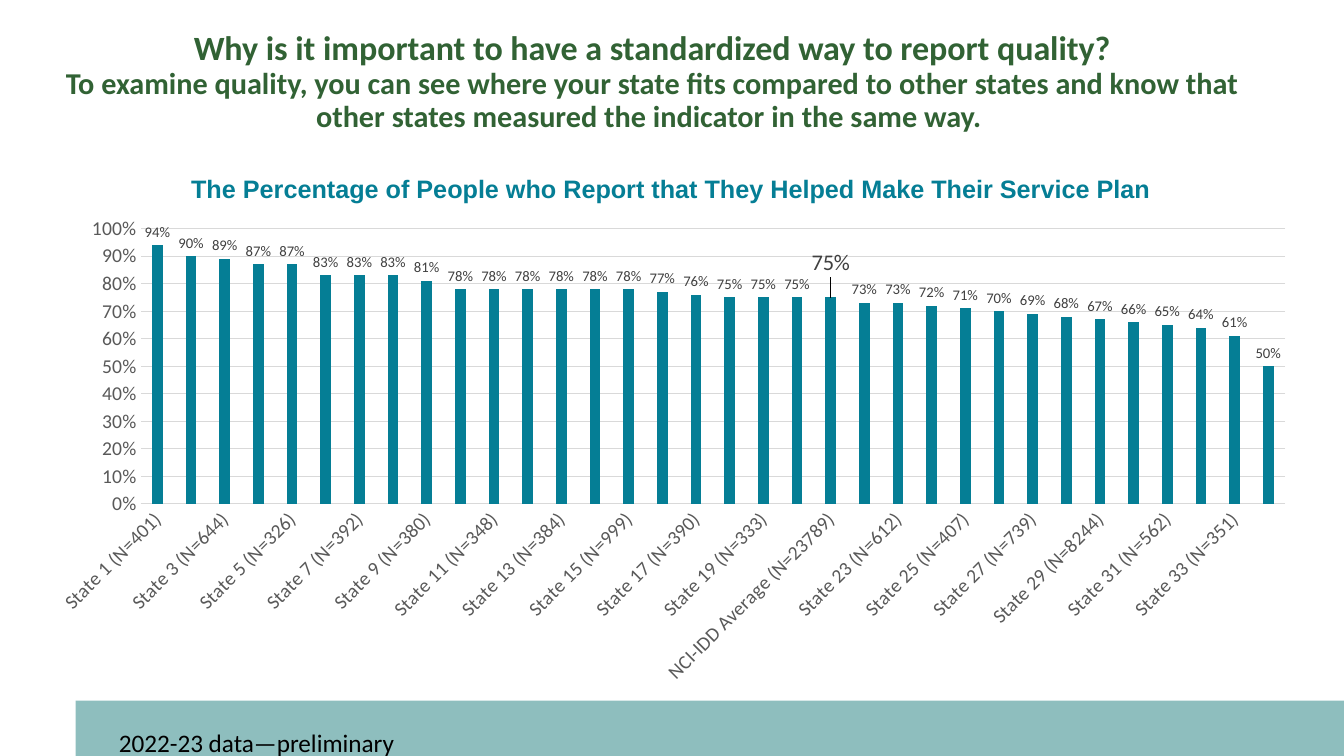
from dataclasses import dataclass
from typing import Any

from lxml import etree
from pptx import Presentation
from pptx import util as u
from pptx.chart import data as chart_data
from pptx.dml.color import RGBColor
from pptx.enum import chart as ch
from pptx.enum import shapes, text

CHART_NS = "http://schemas.openxmlformats.org/drawingml/2006/chart"


@dataclass(frozen=True)
class Theme:
    body_font: str = "Calibri"
    chart_title_font: str = "Arial"
    green: str = "316234"
    teal: str = "057E95"
    band: str = "8EBEBE"
    black: str = "000000"
    axis_gray: str = "595959"
    label_gray: str = "404040"
    grid_gray: str = "D9D9D9"
    headline: float = 24.3
    subhead: float = 21.6
    chart_title: float = 18
    note: float = 18
    axis: float = 14
    label: float = 10.5
    average_label: float = 16


@dataclass(frozen=True)
class Span:
    words: str
    size: float
    color: str
    bold: bool = False


@dataclass(frozen=True)
class TextBlock:
    left: float
    top: float
    width: float
    height: float
    lines: tuple[Span, ...]
    align: text.PP_ALIGN
    anchor: text.MSO_ANCHOR
    line_spacing: float


THEME = Theme()
BLOCKS = (
    TextBlock(0.33, 0.46, 12.28, 0.72, (
        Span("Why is it important to have a standardized way to report quality?",
             THEME.headline, THEME.green, True),
        Span("To examine quality, you can see where your state fits compared to other "
             "states and know that other states measured the indicator in the same way. ",
             THEME.subhead, THEME.green, True),
    ), text.PP_ALIGN.CENTER, text.MSO_ANCHOR.MIDDLE, 0.9),
    TextBlock(1.08, 7.17, 4.65, 0.4,
              (Span("2022-23 data—preliminary", THEME.note, THEME.black),),
              text.PP_ALIGN.LEFT, text.MSO_ANCHOR.TOP, 1.0),
)

CHART_TITLE = "The Percentage of People who Report that They Helped Make Their Service Plan"
AVERAGE = 20  # position of the average among the states
SAMPLES = (401, 424, 644, 516, 326, 342, 392, 391, 380, 505, 348, 398,
           384, 391, 999, 451, 390, 347, 333, 1612, 23789, 482, 612, 382,
           407, 310, 739, 380, 8244, 427, 562, 572, 351, 347)
PERCENTS = (94, 90, 89, 87, 87, 83, 83, 83, 81, 78, 78, 78,
            78, 78, 78, 77, 76, 75, 75, 75, 75, 73, 73, 72,
            71, 70, 69, 68, 67, 66, 65, 64, 61, 50)


def apply(target: Any, formats: dict[str, Any]) -> None:
    for name, value in formats.items():
        setattr(target, name, value)


def style_font(font: Any, size: float, color: str, bold: bool = False,
               name: str = THEME.body_font) -> None:
    apply(font, {"size": u.Pt(size), "bold": bold, "name": name})
    font.color.rgb = RGBColor.from_string(color)


def style_line(line: Any, color: str) -> None:
    line.width = u.Pt(0.75)
    line.color.rgb = RGBColor.from_string(color)


def chart_tag(parent: Any, name: str, value: Any = None) -> Any:
    child = etree.SubElement(parent, f"{{{CHART_NS}}}{name}")
    if value is not None:
        child.set("val", str(value))
    return child


def make_layout(parent: Any, settings: dict[str, Any]) -> Any:
    """Build a manual chart layout, replacing any that the parent has."""
    for old in parent.findall(f"{{{CHART_NS}}}layout"):
        parent.remove(old)
    layout = chart_tag(parent, "layout")
    manual = chart_tag(layout, "manualLayout")
    for name, value in settings.items():
        chart_tag(manual, name, value)
    return layout


def add_band(page: Any) -> None:
    band = page.shapes.add_shape(shapes.MSO_SHAPE.RECTANGLE, u.Inches(0.75),
                                 u.Inches(6.95), u.Inches(12.58), u.Inches(0.55))
    band.shadow.inherit = False
    band.fill.solid()
    band.fill.fore_color.rgb = RGBColor.from_string(THEME.band)
    band.line.fill.background()


def add_text(page: Any, block: TextBlock) -> None:
    box = page.shapes.add_textbox(u.Inches(block.left), u.Inches(block.top),
                                  u.Inches(block.width), u.Inches(block.height))
    apply(box.text_frame, {"word_wrap": True, "vertical_anchor": block.anchor})
    para = box.text_frame.paragraphs[0]
    apply(para, {"alignment": block.align, "line_spacing": block.line_spacing})
    for index, line in enumerate(block.lines):
        if index:
            para.add_line_break()
        span = para.add_run()
        span.text = line.words
        style_font(span.font, line.size, line.color, line.bold)


def style_axes(chart: Any) -> None:
    for axis in (chart.category_axis, chart.value_axis):
        apply(axis, {"major_tick_mark": ch.XL_TICK_MARK.NONE,
                     "minor_tick_mark": ch.XL_TICK_MARK.NONE})
        style_font(axis.tick_labels.font, THEME.axis, THEME.axis_gray)
    states, scale = chart.category_axis, chart.value_axis
    style_line(states.format.line, THEME.grid_gray)
    states._element.txPr.bodyPr.set("rot", "-2700000")
    skip = chart_tag(states._element, "tickLblSkip", 2)
    states._element.find(f"{{{CHART_NS}}}noMultiLvlLbl").addprevious(skip)
    apply(scale, {"minimum_scale": 0, "maximum_scale": 1, "major_unit": 0.1,
                  "has_major_gridlines": True})
    apply(scale.tick_labels, {"number_format": "0%", "number_format_is_linked": False})
    style_line(scale.major_gridlines.format.line, THEME.grid_gray)
    scale.format.line.fill.background()


def style_columns(plot: Any) -> None:
    apply(plot, {"gap_width": 219, "overlap": -27, "vary_by_categories": False})
    series = plot.series[0]
    series.format.fill.solid()
    series.format.fill.fore_color.rgb = RGBColor.from_string(THEME.teal)
    labels = series.data_labels
    apply(labels, {"show_value": True, "number_format": "0%",
                   "number_format_is_linked": False,
                   "position": ch.XL_LABEL_POSITION.OUTSIDE_END})
    style_font(labels.font, THEME.label, THEME.label_gray)
    average = series.points[AVERAGE].data_label
    style_font(average.font, THEME.average_label, THEME.label_gray)
    average.position = ch.XL_LABEL_POSITION.OUTSIDE_END
    point = labels._element.find(f"{{{CHART_NS}}}dLbl")
    point.find(f"{{{CHART_NS}}}idx").addnext(make_layout(point, {"x": 0, "y": -0.03}))


def add_state_chart(page: Any) -> None:
    data = chart_data.CategoryChartData(number_format="0%")
    data.categories = [
        f"{'NCI-IDD Average' if index == AVERAGE else f'State {index + 1}'} (N={count})"
        for index, count in enumerate(SAMPLES)]
    data.add_series("Series 1", [percent / 100 for percent in PERCENTS])
    chart = page.shapes.add_chart(
        ch.XL_CHART_TYPE.COLUMN_CLUSTERED, u.Inches(0.33), u.Inches(1.45),
        u.Inches(12.67), u.Inches(5.46), data).chart
    style_font(chart.font, THEME.axis, THEME.black)
    apply(chart, {"has_legend": False, "has_title": True})
    para = chart.chart_title.text_frame.paragraphs[0]
    span = para.add_run()
    span.text = CHART_TITLE
    style_font(span.font, THEME.chart_title, THEME.teal, True, THEME.chart_title_font)
    title = chart.chart_title._element
    title.find(f"{{{CHART_NS}}}tx").addnext(
        make_layout(title, {"xMode": "edge", "yMode": "edge", "x": 0.12, "y": 0.04}))
    style_axes(chart)
    style_columns(chart.plots[0])
    area = chart._chartSpace.chart.plotArea
    area.insert(0, make_layout(area, {
        "layoutTarget": "inner", "xMode": "edge", "yMode": "edge",
        "x": 0.084, "y": 0.15, "w": 0.896, "h": 0.5}))


def main() -> None:
    deck = Presentation()
    apply(deck, {"slide_width": u.Inches(13.33), "slide_height": u.Inches(7.5)})
    page = deck.slides.add_slide(deck.slide_layouts[6])
    add_band(page)
    add_state_chart(page)
    for block in BLOCKS:
        add_text(page, block)
    deck.save("out.pptx")


if __name__ == "__main__":
    main()
